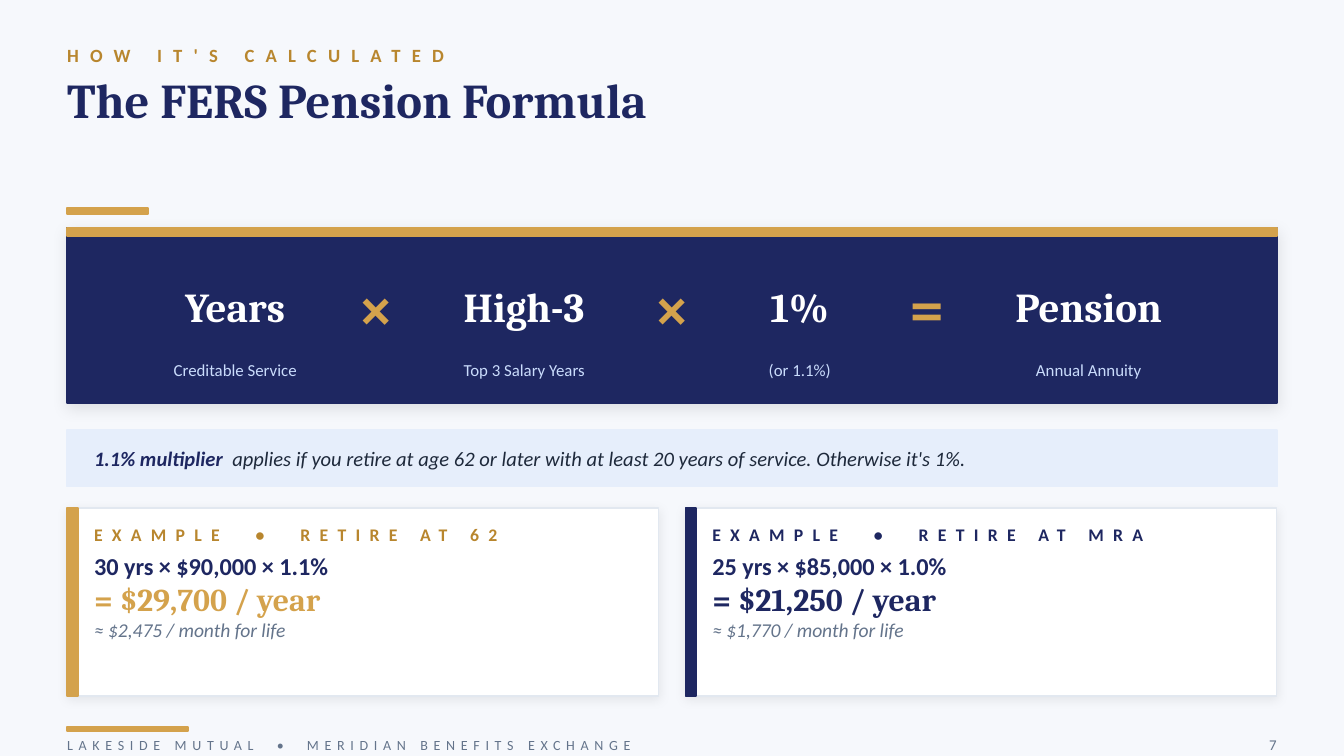
from pptx import Presentation
from pptx.dml.color import RGBColor
from pptx.enum.shapes import MSO_SHAPE
from pptx.enum.text import MSO_ANCHOR, PP_ALIGN
from pptx.oxml import parse_xml
from pptx.oxml.ns import nsdecls, qn
from pptx.util import Inches, Pt

RECT = MSO_SHAPE.RECTANGLE
TOP, MIDDLE = MSO_ANCHOR.TOP, MSO_ANCHOR.MIDDLE
LEFT, CENTER, RIGHT = PP_ALIGN.LEFT, PP_ALIGN.CENTER, PP_ALIGN.RIGHT

PAPER = RGBColor(0xF6, 0xF8, 0xFC)
NAVY = RGBColor(0x1E, 0x27, 0x61)
GOLD = RGBColor(0xD4, 0xA2, 0x4C)
BRONZE = RGBColor(0xB8, 0x86, 0x2E)
WHITE = RGBColor(0xFF, 0xFF, 0xFF)
ICE = RGBColor(0xCA, 0xDC, 0xFC)
PALE = RGBColor(0xE6, 0xEE, 0xFB)
INK = RGBColor(0x1E, 0x29, 0x3B)
SLATE = RGBColor(0x64, 0x74, 0x8B)
BORDER = RGBColor(0xE2, 0xE8, 0xF0)

SANS, SERIF = "Calibri", "Cambria"
MARGIN, CONTENT_W = 0.5, 9


def add_run(p, text, size=10, font=SANS, color=NAVY, bold=False,
            italic=False, spacing=None):
    r = p.add_run()
    r.text = text
    r.font.size = Pt(size)
    r.font.name = font
    r.font.color.rgb = color
    r.font.bold = bold
    r.font.italic = italic
    if spacing:
        r.font._element.set("spc", str(spacing * 100))


def add_box(slide, x, y, w, h, align=LEFT, anchor=MIDDLE):
    tf = slide.shapes.add_textbox(Inches(x), Inches(y), Inches(w), Inches(h)).text_frame
    tf.word_wrap = True
    tf.vertical_anchor = anchor
    tf.margin_left = tf.margin_right = tf.margin_top = tf.margin_bottom = 0
    tf.paragraphs[0].alignment = align
    return tf


def add_text(slide, text, x, y, w, h, align=LEFT, anchor=MIDDLE, **style):
    tf = add_box(slide, x, y, w, h, align, anchor)
    add_run(tf.paragraphs[0], text, **style)


def add_rect(slide, x, y, w, h, fill, line=None, line_width=1, shadow=None):
    s = slide.shapes.add_shape(RECT, Inches(x), Inches(y), Inches(w), Inches(h))
    s.shadow.inherit = False
    s.fill.solid()
    s.fill.fore_color.rgb = fill
    s.line.color.rgb = line or fill
    s.line.width = Pt(line_width)
    if shadow:
        add_shadow(s, *shadow)


def add_shadow(s, opacity, blur, distance):
    effects = s._element.spPr.find(qn("a:effectLst"))
    effects.append(parse_xml(
        f'<a:outerShdw {nsdecls("a")} blurRad="{Pt(blur)}" dist="{Pt(distance)}" '
        f'dir="5400000" algn="bl" rotWithShape="0"><a:srgbClr val="000000">'
        f'<a:alpha val="{opacity * 1000}"/></a:srgbClr></a:outerShdw>'))


def add_header(slide):
    add_text(slide, "HOW IT'S CALCULATED", MARGIN, 0.28, 9, 0.26,
             color=BRONZE, bold=True, spacing=6)
    add_text(slide, "The FERS Pension Formula", MARGIN, 0.52, 9.2, 1,
             anchor=TOP, size=26, font=SERIF, bold=True)
    add_rect(slide, MARGIN, 1.55, 0.6, 0.04, GOLD)


def add_formula(slide):
    add_rect(slide, MARGIN, 1.7, CONTENT_W, 1.3, NAVY, shadow=(10, 8, 2))
    add_rect(slide, MARGIN, 1.7, CONTENT_W, 0.06, GOLD)
    terms = [
        ("Years", "Creditable Service", 1.6, "×"),
        ("High-3", "Top 3 Salary Years", 1.7, "×"),
        ("1%", "(or 1.1%)", 1.4, "="),
        ("Pension", "Annual Annuity", 1.9, None),
    ]
    operator_w = 0.5
    x = 0.95
    for term, caption, w, operator in terms:
        add_text(slide, term, x, 2, w, 0.55, align=CENTER,
                 size=22, font=SERIF, color=WHITE, bold=True)
        add_text(slide, caption, x, 2.55, w, 0.4, align=CENTER, size=9, color=ICE)
        x += w
        if operator:
            add_text(slide, operator, x, 2, operator_w, 0.55, align=CENTER,
                     size=32, font=SERIF, color=GOLD, bold=True)
            x += operator_w


def add_note(slide):
    add_rect(slide, MARGIN, 3.2, CONTENT_W, 0.42, PALE)
    p = add_box(slide, 0.7, 3.2, 8.6, 0.42).paragraphs[0]
    add_run(p, "1.1% multiplier", size=11, bold=True, italic=True)
    add_run(p, "  applies if you retire at age 62 or later with at least 20 years "
               "of service. Otherwise it's 1%.", size=11, color=INK, italic=True)


def add_example(slide, x, label, sums, accent, label_color):
    y, h = 3.78, 1.4
    add_rect(slide, x, y, 4.4, h, WHITE, line=BORDER, line_width=0.75, shadow=(8, 6, 1.5))
    add_rect(slide, x, y, 0.08, h, accent)
    add_text(slide, label, x + 0.2, 3.85, 4, 0.25,
             size=9.5, color=label_color, bold=True, spacing=5)
    tf = add_box(slide, x + 0.2, 4.1, 4, 1.05, anchor=TOP)
    product, yearly, monthly = sums
    add_run(tf.paragraphs[0], product, size=13, bold=True)
    add_run(tf.add_paragraph(), yearly, size=17, font=SERIF, color=accent, bold=True)
    add_run(tf.add_paragraph(), monthly, size=10.5, color=SLATE, italic=True)


def add_footer(slide):
    add_rect(slide, MARGIN, 5.41, 0.9, 0.03, GOLD)
    add_text(slide, "LAKESIDE MUTUAL  •  MERIDIAN BENEFITS EXCHANGE", MARGIN, 5.45, 6, 0.18,
             size=7.5, color=SLATE, spacing=3)
    add_text(slide, "7", 9, 5.45, 0.5, 0.18, align=RIGHT, size=8, color=SLATE)


def main():
    prs = Presentation()
    prs.slide_width = Inches(10)
    prs.slide_height = Inches(10) * 9 // 16
    slide = prs.slides.add_slide(prs.slide_layouts[6])
    slide.background.fill.solid()
    slide.background.fill.fore_color.rgb = PAPER

    add_header(slide)
    add_formula(slide)
    add_note(slide)
    add_example(slide, MARGIN, "EXAMPLE  •  RETIRE AT 62",
                ("30 yrs × $90,000 × 1.1%", "= $29,700 / year", "≈ $2,475 / month for life"),
                GOLD, BRONZE)
    add_example(slide, 5.1, "EXAMPLE  •  RETIRE AT MRA",
                ("25 yrs × $85,000 × 1.0%", "= $21,250 / year", "≈ $1,770 / month for life"),
                NAVY, NAVY)
    add_footer(slide)
    prs.save("out.pptx")


if __name__ == "__main__":
    main()
